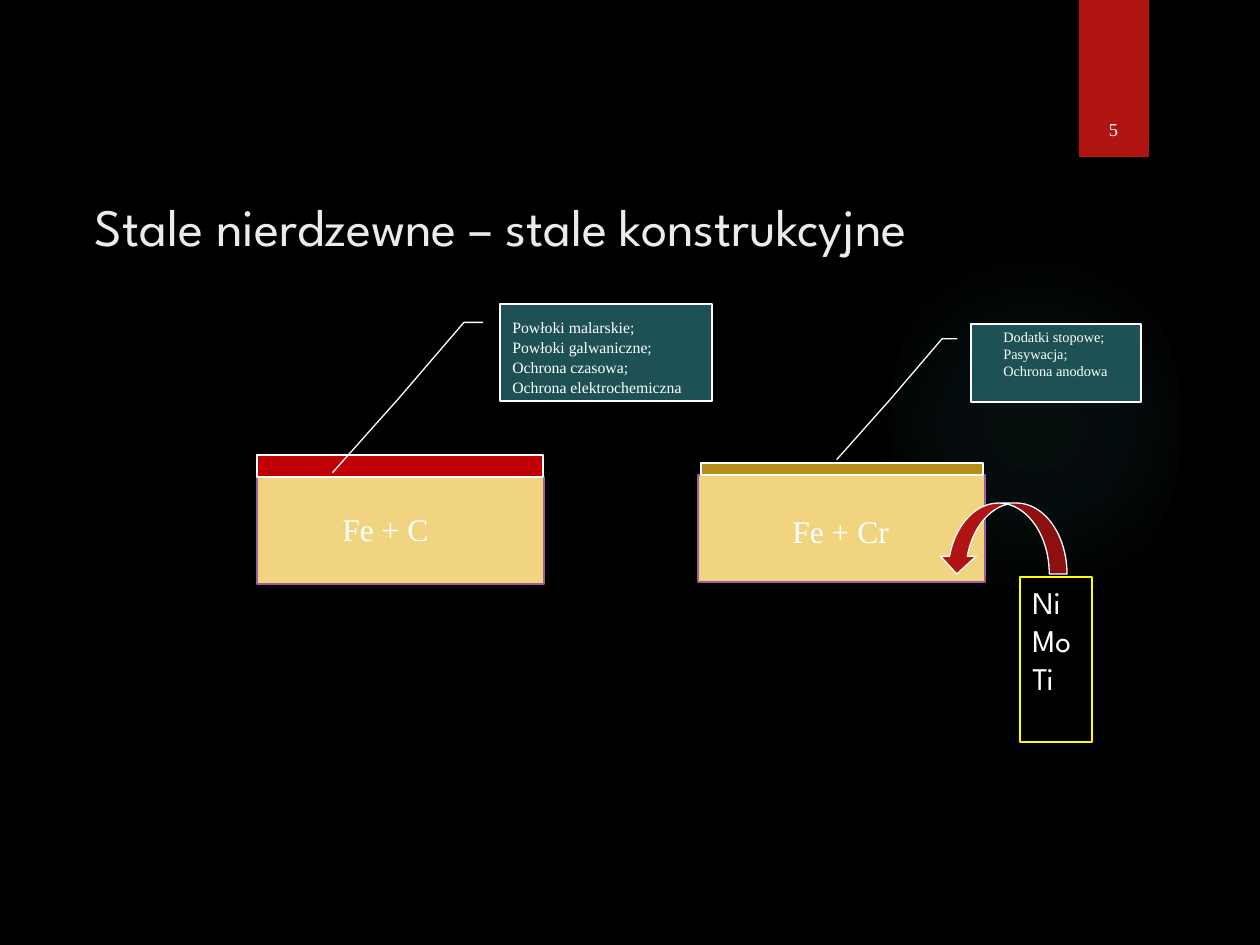
from dataclasses import dataclass

from lxml.etree import SubElement
from pptx import Presentation
from pptx.dml.color import RGBColor
from pptx.enum.shapes import MSO_SHAPE as Shape
from pptx.enum.text import MSO_ANCHOR as Anchor, PP_ALIGN as Align
from pptx.oxml.ns import qn
from pptx.util import Emu, Pt


@dataclass(frozen=True)
class Theme:
    background: str = "000000"
    title: str = "EBEBEB"
    text: str = "FFFFFF"
    accent: str = "B01513"
    glow: str = "50B9C1"
    steel: str = "F0D47F"
    steel_edge: str = "9E5E9B"
    callout: str = "1E5155"
    additions_edge: str = "FFFF00"
    heading_font: str = "League Spartan"
    body_font: str = "Times New Roman"
    title_size: float = 30
    label_size: float = 18
    number_size: float = 10.5
    line_width: float = 0.75


THEME = Theme()
EMU_PER_PX = 914400 / 126

# Boxes are (left, top, width, height) in px.
TITLE = ("Stale nierdzewne – stale konstrukcyjne", (86, 189, 1007, 118))
PAGE_NUMBER = ("5", (1070, 40, 87, 106))
GLOW_BOX = (890, 231, 291, 388)
GLOW_STOPS = [(0, 7), (36, 6), (69, 0)]  # position %, opacity %
TAB_BOX = (1079, 0, 70, 157)
STEELS = [
    {"label": "Fe + C", "label_box": (330, 504, 122, 50),
     "body": (257, 477, 287, 107), "coating": (257, 455, 286, 22), "coating_color": "C00000"},
    {"label": "Fe + Cr", "label_box": (780, 506, 122, 50),
     "body": (698, 475, 287, 107), "coating": (701, 463, 282, 12), "coating_color": "B68E15"},
]
CALLOUTS = [
    {"box": (500, 304, 212, 97), "text_box": (500, 311, 212, 90), "size": 9, "spacing": 1.05,
     "lines": ["Powłoki malarskie;", "Powłoki galwaniczne;", "Ochrona czasowa;",
               "Ochrona elektrochemiczna"]},
    {"box": (971, 324, 170, 78), "text_box": (991, 322, 131, 83), "size": 8.2, "spacing": 1,
     "lines": ["Dodatki stopowe;", "Pasywacja;", "Ochrona anodowa"]},
]
LEADER = [0.19, -0.08, 0.19, -0.17, 0.98, -0.48, 1.74, -0.79]
ADDITIONS = (["Ni", "Mo", "Ti"], (1020, 577, 72, 165))
ARROW_BOX = (939, 503, 128, 71)


def px(length):
    return Emu(round(length * EMU_PER_PX))


def place(box):
    return [px(length) for length in box]


def add_block(slide, kind, box, fill, line=None):
    shape = slide.shapes.add_shape(kind, *place(box))
    shape.shadow.inherit = False
    shape.fill.solid()
    shape.fill.fore_color.rgb = RGBColor.from_string(fill)
    if line:
        shape.line.color.rgb = RGBColor.from_string(line)
        shape.line.width = Pt(THEME.line_width)
    else:
        shape.line.fill.background()
    return shape


def write(shape, lines, size, font=THEME.body_font, color=THEME.text,
          align=Align.LEFT, anchor=Anchor.TOP, spacing=1, wrap=True):
    frame = shape.text_frame
    frame.word_wrap = wrap
    frame.vertical_anchor = anchor
    frame.text = "\n".join(lines)
    for paragraph in frame.paragraphs:
        paragraph.alignment = align
        paragraph.line_spacing = spacing
        paragraph.font.size = Pt(size)
        paragraph.font.name = font
        paragraph.font.color.rgb = RGBColor.from_string(color)
    return frame


def add_text(slide, lines, box, size, **style):
    return write(slide.shapes.add_textbox(*place(box)), lines, size, **style)


def add_glow(slide):
    """Ellipse with a see-through radial gradient."""
    ellipse = add_block(slide, Shape.OVAL, GLOW_BOX, THEME.glow)
    properties = ellipse.fill._xPr
    solid = properties.find(qn("a:solidFill"))
    gradient = SubElement(properties, qn("a:gradFill"), rotWithShape="1")
    properties.replace(solid, gradient)
    stops = SubElement(gradient, qn("a:gsLst"))
    for position, opacity in GLOW_STOPS:
        stop = SubElement(stops, qn("a:gs"), pos=str(position * 1000))
        color = SubElement(stop, qn("a:srgbClr"), val=THEME.glow)
        SubElement(color, qn("a:alpha"), val=str(opacity * 1000))
    radial = SubElement(gradient, qn("a:path"), path="circle")
    SubElement(radial, qn("a:fillToRect"), {side: "50000" for side in "ltrb"})


def add_callout(slide, callout):
    shape = add_block(slide, Shape.LINE_CALLOUT_3, callout["box"], THEME.callout, THEME.text)
    for index, value in enumerate(LEADER):
        shape.adjustments[index] = value
    add_text(slide, callout["lines"], callout["text_box"], callout["size"],
             spacing=callout["spacing"])


def main():
    presentation = Presentation()
    presentation.slide_width, presentation.slide_height = px(1260), px(945)
    slide = presentation.slides.add_slide(presentation.slide_layouts[6])
    slide.background.fill.solid()
    slide.background.fill.fore_color.rgb = RGBColor.from_string(THEME.background)

    add_glow(slide)
    add_block(slide, Shape.RECTANGLE, TAB_BOX, THEME.accent)
    title, title_box = TITLE
    frame = add_text(slide, [title], title_box, THEME.title_size,
                     font=THEME.heading_font, color=THEME.title)
    frame.margin_left, frame.margin_top = px(9), px(5)
    number, number_box = PAGE_NUMBER
    add_text(slide, [number], number_box, THEME.number_size,
             align=Align.CENTER, anchor=Anchor.BOTTOM)

    for steel in STEELS:
        add_block(slide, Shape.RECTANGLE, steel["body"], THEME.steel, THEME.steel_edge)
        add_block(slide, Shape.RECTANGLE, steel["coating"], steel["coating_color"], THEME.text)
        add_text(slide, [steel["label"]], steel["label_box"], THEME.label_size, wrap=False)
    for callout in CALLOUTS:
        add_callout(slide, callout)

    elements, additions_box = ADDITIONS
    additions = add_block(slide, Shape.RECTANGLE, additions_box, THEME.background,
                          THEME.additions_edge)
    write(additions, elements, THEME.label_size, font=THEME.heading_font)
    arrow = add_block(slide, Shape.CURVED_UP_ARROW, ARROW_BOX, THEME.accent, THEME.text)
    arrow.rotation = 180

    presentation.save("out.pptx")


if __name__ == "__main__":
    main()
